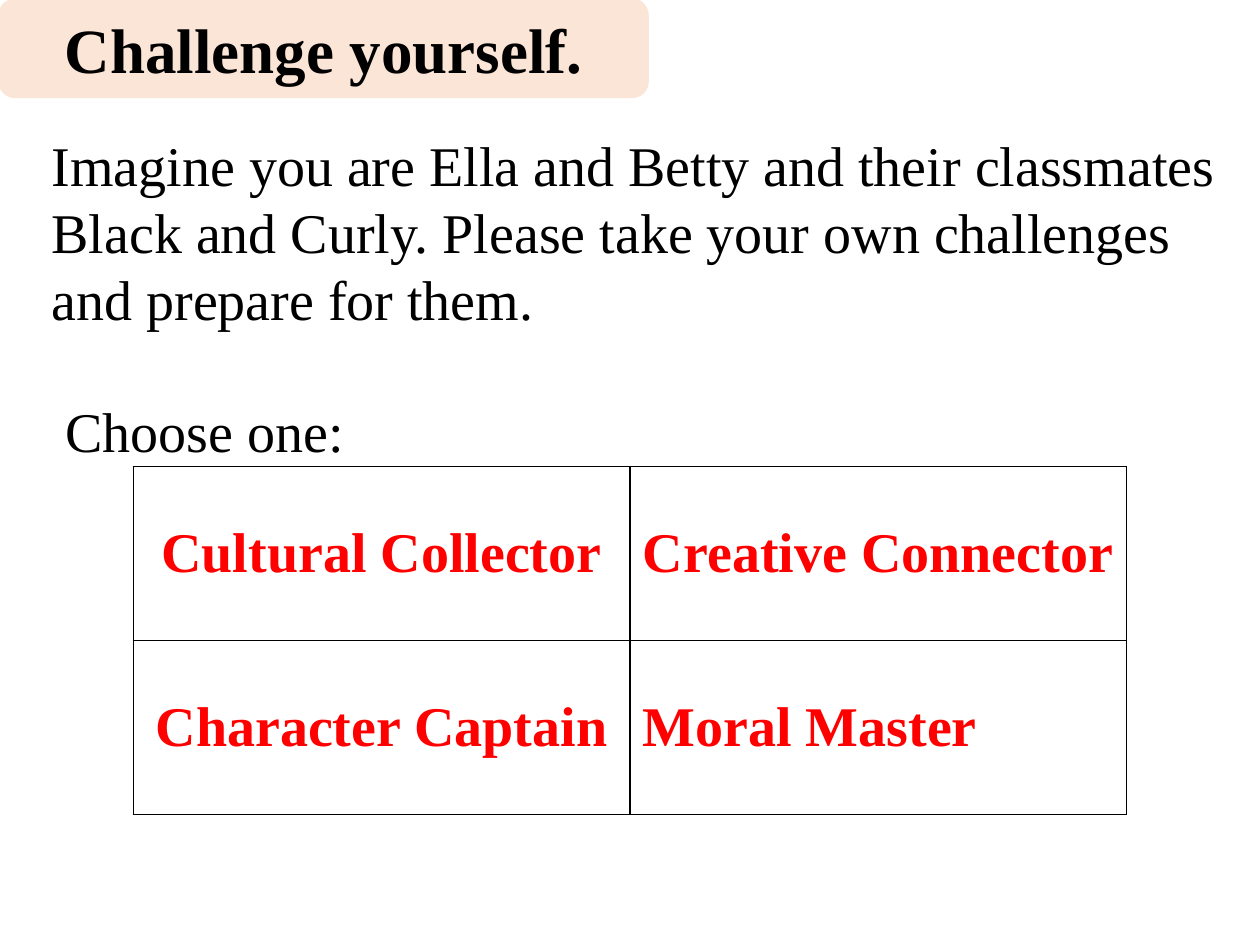
"""Build the "Challenge yourself" slide with a choice of four roles."""
from lxml.etree import SubElement
from pptx import Presentation
from pptx.dml.color import RGBColor
from pptx.enum.shapes import MSO_SHAPE
from pptx.enum.text import MSO_ANCHOR as Anchor, PP_ALIGN as Align
from pptx.oxml.ns import qn
from pptx.util import Cm, Pt

BLACK = RGBColor(0x00, 0x00, 0x00)
RED = RGBColor(0xFF, 0x00, 0x00)
PEACH = RGBColor(0xFB, 0xE5, 0xD6)
FONT = "Times New Roman"

TITLE = "Challenge yourself."
TITLE_BOX = (-0.03, -0.03, 13.11, 2.01)
TEXTS = [
    ("Imagine you are Ella and Betty and their classmates Black and Curly. "
     "Please take your own challenges and prepare for them.",
     (0.79, 2.5, 24.61, 4.32), Pt(38.4)),
    ("Choose one:", (1.07, 7.2, 22.48, 2.29), 1.5),
]
ROLES = [
    [("Cultural Collector", Align.CENTER), ("Creative Connector", Align.CENTER)],
    [("Character Captain", Align.CENTER), ("Moral Master", Align.LEFT)],
]
TABLE_LEFT, TABLE_TOP = 2.69, 9.4
COLUMN_WIDTH, ROW_HEIGHT = 10.01, 3.51


def lengths(box):
    return [Cm(value) for value in box]


def write(frame, text, size=32, color=BLACK, bold=False, align=Align.LEFT,
          anchor=Anchor.TOP, spacing=1.0):
    frame.word_wrap = True
    frame.vertical_anchor = anchor
    paragraph = frame.paragraphs[0]
    paragraph.alignment = align
    paragraph.line_spacing = spacing
    run = paragraph.add_run()
    run.text = text
    run.font.name = FONT
    run.font.size = Pt(size)
    run.font.bold = bold
    run.font.color.rgb = color


def add_title(slide):
    banner = slide.shapes.add_shape(MSO_SHAPE.ROUNDED_RECTANGLE, *lengths(TITLE_BOX))
    banner.shadow.inherit = False
    banner.fill.solid()
    banner.fill.fore_color.rgb = PEACH
    banner.line.fill.background()
    title = slide.shapes.title
    title.left, title.top, title.width, title.height = lengths(TITLE_BOX)
    title._element.addprevious(banner._element)
    write(title.text_frame, TITLE, size=36, bold=True, align=Align.CENTER,
          anchor=Anchor.MIDDLE)


def add_borders(cell):
    properties = cell._tc.get_or_add_tcPr()
    for index, side in enumerate(("lnL", "lnR", "lnT", "lnB")):
        line = properties.makeelement(qn(f"a:{side}"), {"w": str(Pt(1))})
        fill = SubElement(line, qn("a:solidFill"))
        SubElement(fill, qn("a:srgbClr"), val=str(BLACK))
        properties.insert(index, line)


def add_roles(slide):
    rows, columns = len(ROLES), len(ROLES[0])
    table = slide.shapes.add_table(
        rows, columns, Cm(TABLE_LEFT), Cm(TABLE_TOP),
        Cm(columns * COLUMN_WIDTH), Cm(rows * ROW_HEIGHT)).table
    table.first_row = table.horz_banding = False
    for row, roles in enumerate(ROLES):
        for column, (role, align) in enumerate(roles):
            cell = table.cell(row, column)
            cell.fill.background()
            add_borders(cell)
            write(cell.text_frame, role, color=RED, bold=True, align=align)
            cell.vertical_anchor = Anchor.MIDDLE


def main():
    presentation = Presentation()
    presentation.slide_width, presentation.slide_height = Cm(25.4), Cm(19.05)
    slide = presentation.slides.add_slide(presentation.slide_layouts[5])
    add_title(slide)
    for text, box, spacing in TEXTS:
        write(slide.shapes.add_textbox(*lengths(box)).text_frame, text, spacing=spacing)
    add_roles(slide)
    presentation.save("out.pptx")


if __name__ == "__main__":
    main()
